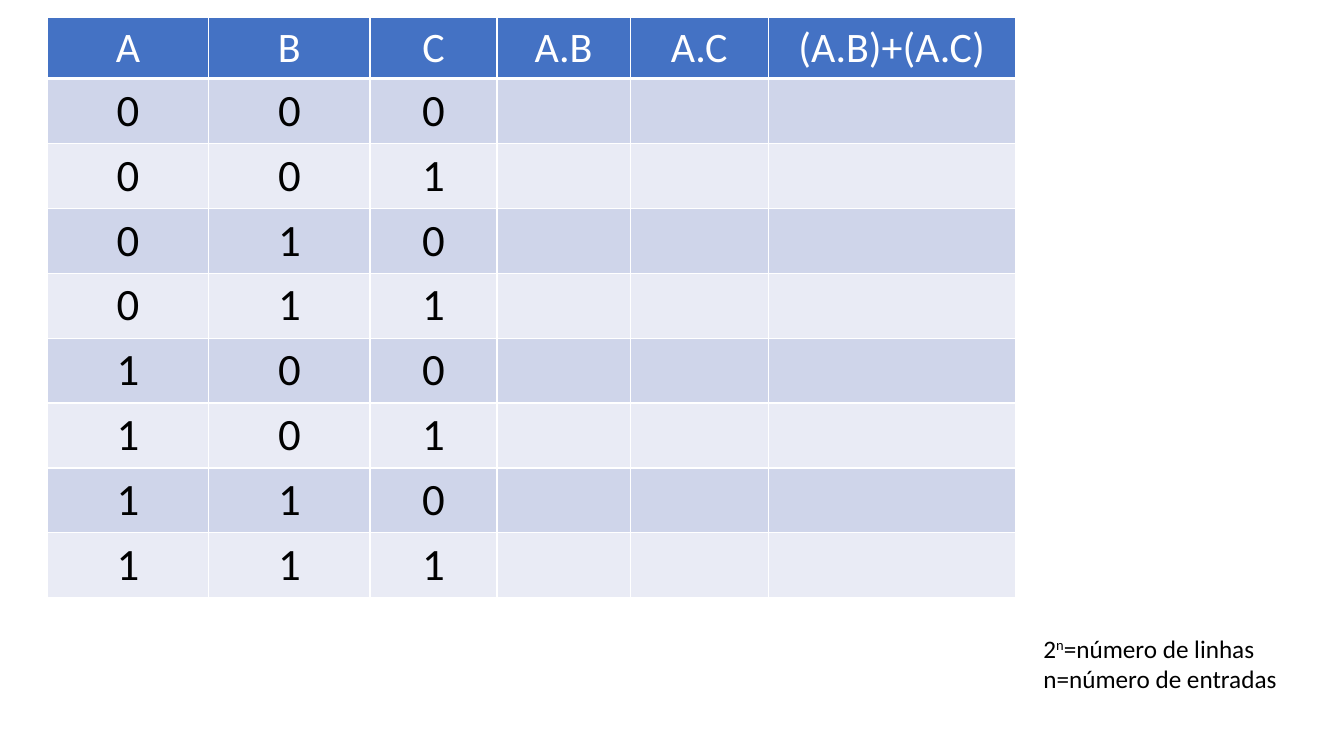
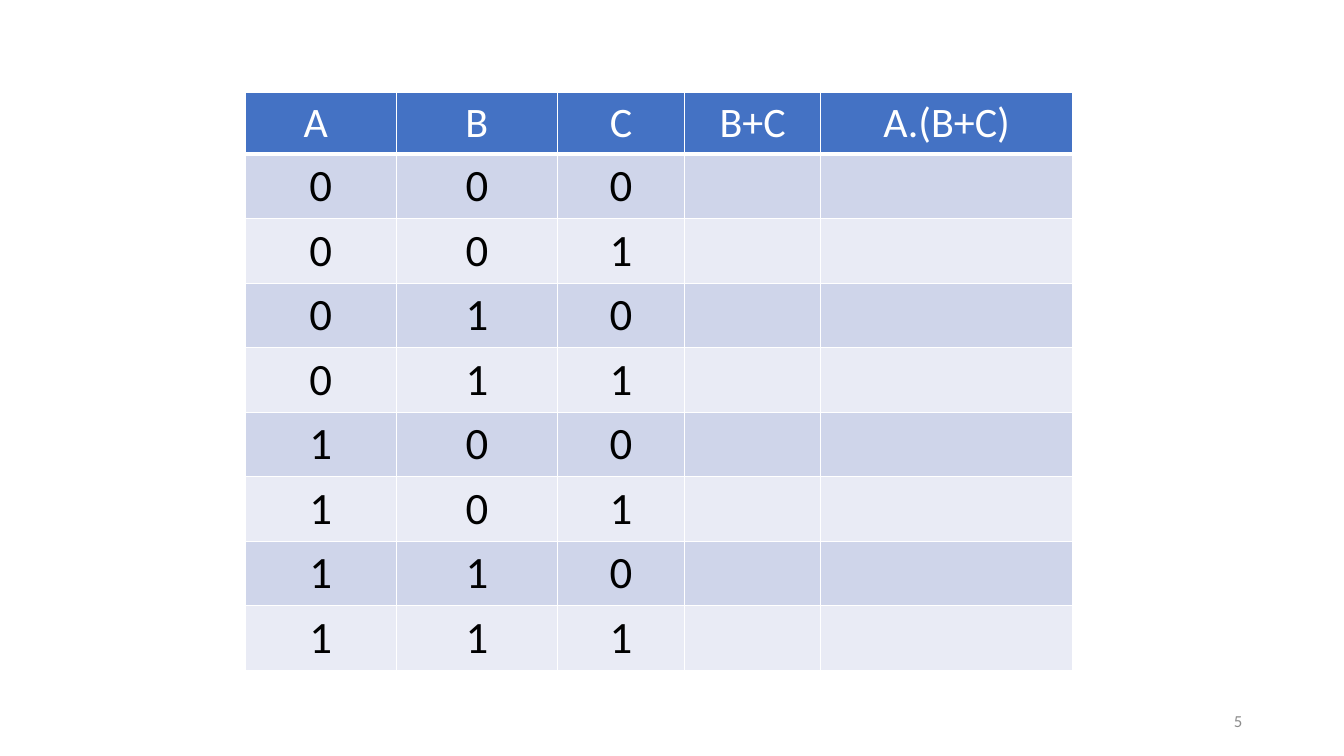
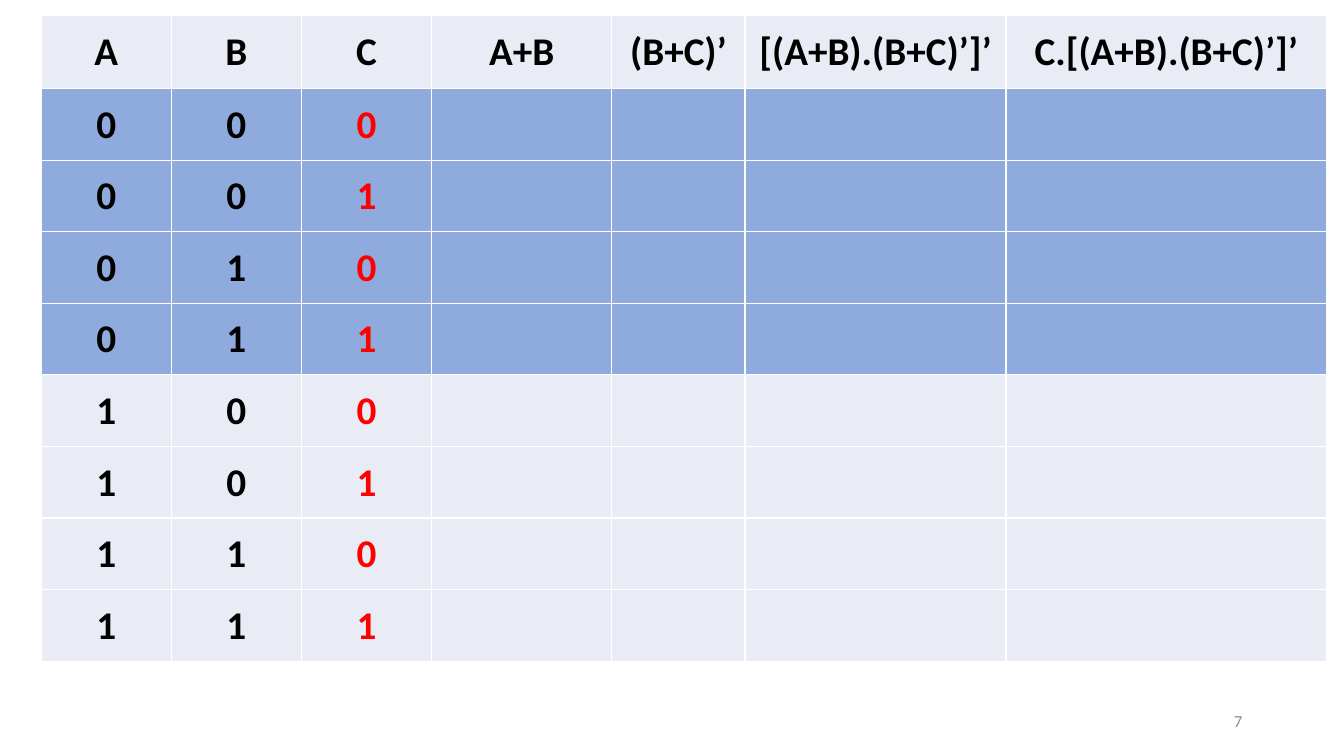
from itertools import product

from lxml import etree
from pptx import Presentation
from pptx.dml.color import RGBColor
from pptx.enum.text import MSO_ANCHOR, PP_ALIGN
from pptx.oxml.ns import qn
from pptx.util import Inches, Pt

CENTER, LEFT, RIGHT = PP_ALIGN.CENTER, PP_ALIGN.LEFT, PP_ALIGN.RIGHT
TOP, MIDDLE = MSO_ANCHOR.TOP, MSO_ANCHOR.MIDDLE
BLANK_LAYOUT = 6
FONT = "Calibri"
COLORS = {
    "header": "4472C4", "band": "CFD5EA", "pale": "E9EBF5", "half": "8FAADC",
    "white": "FFFFFF", "black": "000000", "red": "FF0000", "gray": "8C8C8C",
}

# Content: every table lists the eight input combinations of A, B and C
INPUTS = list(product("01", repeat=3))
BANDED = {
    "header_fill": "header", "header_color": "white", "row_fills": ["band", "pale"] * 4,
    "input_colors": ["black"] * 3, "header_size": 30, "body_size": 32, "bold": False,
    "header_height": 0.61, "row_height": 0.64, "header_line": 3,
    "anchor": TOP, "margins": (0.1, 0.05, 0.1, 0.05),
}
HALVES = {
    "header_fill": "pale", "header_color": "black", "row_fills": ["half"] * 4 + ["pale"] * 4,
    "input_colors": ["black", "black", "red"], "header_size": 28, "body_size": 28, "bold": True,
    "header_height": 0.73, "row_height": 0.71, "header_line": 1,
    "anchor": MIDDLE, "margins": (0.01, 0.01, 0.01, 0),
}
SLIDES = [
    {
        "headers": ["A", "B", "C", "A.B", "A.C", "(A.B)+(A.C)"],
        "widths": [1.6, 1.6, 1.26, 1.32, 1.37, 2.45],
        "left": 0.47, "top": 0.17, "style": BANDED,
        "note": [[("2", 0), ("n", 30), ("=número de linhas", 0)],
                 [("n=número de entradas", 0)]],
    },
    {
        "headers": ["A ", "B", "C", "B+C", "A.(B+C)"],
        "widths": [1.5, 1.6, 1.26, 1.35, 2.5],
        "left": 2.43, "top": 0.92, "style": BANDED, "number": "5",
    },
    {
        "headers": ["A", "B", "C", "A+B", "(B+C)’", "[(A+B).(B+C)’]’", "C.[(A+B).(B+C)’]’"],
        "widths": [1.29, 1.29, 1.29, 1.79, 1.32, 2.59, 3.18],
        "left": 0.41, "top": 0.15, "style": HALVES, "number": "7",
    },
]


def add_run(paragraph, text, size, color, bold=False, raised=0):
    run = paragraph.add_run()
    run.text = text
    run.font.name = FONT
    run.font.size = Pt(size)
    run.font.bold = bold
    run.font.color.rgb = RGBColor.from_string(COLORS[color])
    if raised:
        run._r.get_or_add_rPr().set("baseline", str(raised * 1000))


def add_text(slide, box, paragraphs, size, color, alignment=LEFT, anchor=TOP):
    frame = slide.shapes.add_textbox(*map(Inches, box)).text_frame
    frame.word_wrap = True
    frame.vertical_anchor = anchor
    for index, runs in enumerate(paragraphs):
        paragraph = frame.add_paragraph() if index else frame.paragraphs[0]
        paragraph.alignment = alignment
        for text, raised in runs:
            add_run(paragraph, text, size, color, raised=raised)


def set_borders(cell, bottom_width):
    properties = cell._tc.get_or_add_tcPr()
    widths = {"lnL": 1, "lnR": 1, "lnT": 1, "lnB": bottom_width}
    # Border lines must precede the fill
    for position, (side, width) in enumerate(widths.items()):
        line = etree.Element(qn(f"a:{side}"), w=str(Pt(width)))
        fill = etree.SubElement(line, qn("a:solidFill"))
        etree.SubElement(fill, qn("a:srgbClr"), val=COLORS["white"])
        properties.insert(position, line)


def format_cell(cell, text, size, color, fill, style, bottom_width=1):
    cell.fill.solid()
    cell.fill.fore_color.rgb = RGBColor.from_string(COLORS[fill])
    set_borders(cell, bottom_width)
    if text:
        cell.vertical_anchor = style["anchor"]
        (cell.margin_left, cell.margin_top,
         cell.margin_right, cell.margin_bottom) = map(Inches, style["margins"])
        paragraph = cell.text_frame.paragraphs[0]
        paragraph.alignment = CENTER
        add_run(paragraph, text, size, color, style["bold"])


def add_truth_table(slide, content):
    style, headers, widths = content["style"], content["headers"], content["widths"]
    heights = [style["header_height"]] + [style["row_height"]] * len(INPUTS)
    box = (content["left"], content["top"], sum(widths), sum(heights))
    table = slide.shapes.add_table(len(heights), len(widths), *map(Inches, box)).table
    for column, width in zip(table.columns, widths):
        column.width = Inches(width)
    for row, height in zip(table.rows, heights):
        row.height = Inches(height)

    for column, header in enumerate(headers):
        format_cell(table.cell(0, column), header, style["header_size"],
                    style["header_color"], style["header_fill"], style, style["header_line"])
    # Result columns stay blank for the exercise
    blanks = len(headers) - len(style["input_colors"])
    colors = style["input_colors"] + ["black"] * blanks
    for row, (values, fill) in enumerate(zip(INPUTS, style["row_fills"]), start=1):
        texts = list(values) + [""] * blanks
        for column, (text, color) in enumerate(zip(texts, colors)):
            format_cell(table.cell(row, column), text, style["body_size"], color, fill, style)


def main():
    presentation = Presentation()
    presentation.slide_width = Inches(13.33)
    presentation.slide_height = Inches(7.5)
    for content in SLIDES:
        slide = presentation.slides.add_slide(presentation.slide_layouts[BLANK_LAYOUT])
        if "number" in content:
            add_text(slide, (9.42, 6.95, 3, 0.4), [[(content["number"], 0)]],
                     12, "gray", RIGHT, MIDDLE)
        add_truth_table(slide, content)
        if "note" in content:
            add_text(slide, (10.25, 6.23, 2.7, 0.71), content["note"], 18, "black")
    presentation.save("out.pptx")


if __name__ == "__main__":
    main()
